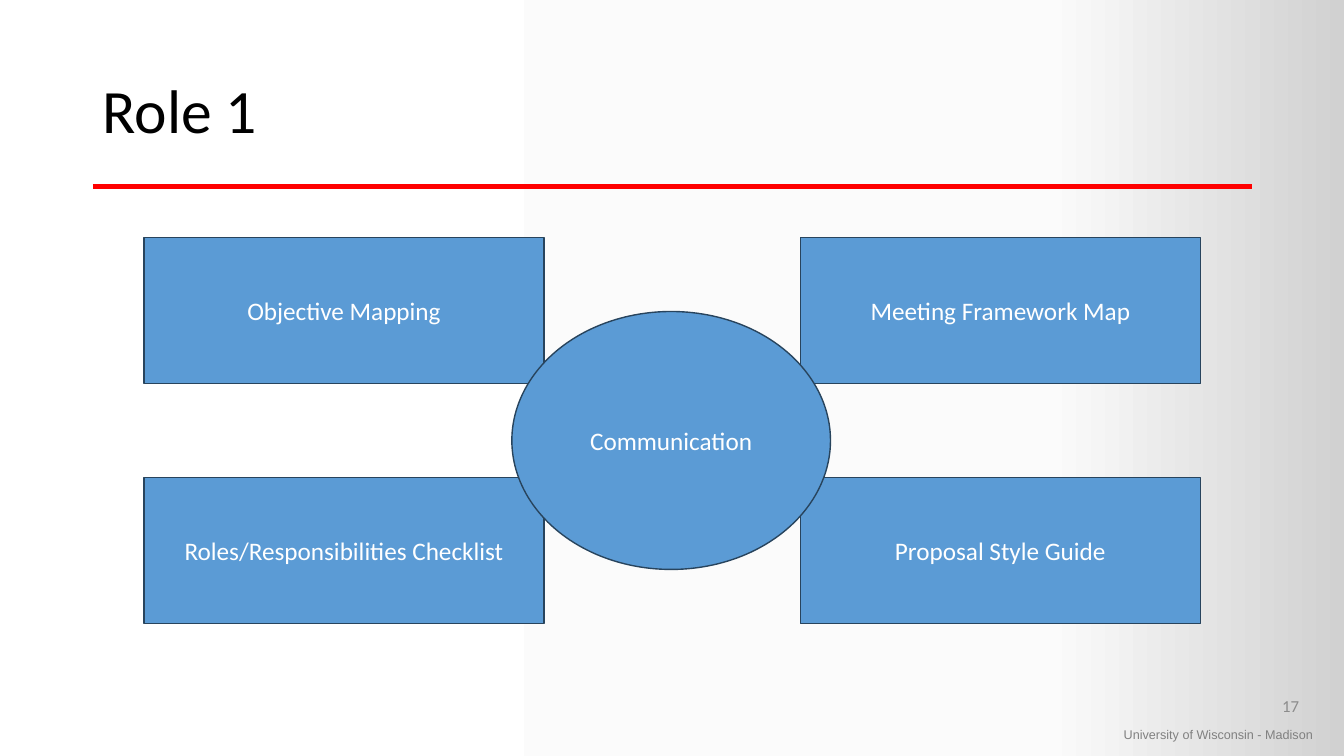
"""Build the Role 1 slide."""
from copy import deepcopy

from lxml import etree
from pptx import Presentation
from pptx.dml.color import RGBColor
from pptx.enum import shapes, text
from pptx.oxml.ns import qn
from pptx.util import Cm, Pt

WHITE = RGBColor(0xFF, 0xFF, 0xFF)
PALE = RGBColor(0xFB, 0xFB, 0xFB)
SILVER = RGBColor(0xD1, 0xD1, 0xD1)
BLACK = RGBColor(0, 0, 0)
RED = RGBColor(0xFF, 0, 0)
BLUE = RGBColor(0x5B, 0x9B, 0xD5)
NAVY = RGBColor(0x28, 0x44, 0x5D)
GRAY = RGBColor(0x80, 0x80, 0x80)
ASH = RGBColor(0x8C, 0x8C, 0x8C)

LEFT, MID, RIGHT = (text.PP_ALIGN.LEFT, text.PP_ALIGN.CENTER,
                    text.PP_ALIGN.RIGHT)
TOP, CORE = text.MSO_ANCHOR.TOP, text.MSO_ANCHOR.MIDDLE
TITLE = {"size": Pt(44), "name": "Calibri"}
LABEL = {"size": Pt(18), "name": "Calibri"}
PAGE = {"size": Pt(12), "name": "Calibri"}
FOOT = {"size": Pt(9), "name": "Arial"}

BOXES = (("Objective Mapping", "Meeting Framework Map"),
         ("Roles/Responsibilities Checklist", "Proposal Style Guide"))


def shade(slide):
    """Give the slide its left-to-right gradient."""
    fill = slide.background.fill
    fill.gradient()
    fill.gradient_angle = 0
    stops = slide.element.find(".//" + qn("a:gsLst"))
    stops.append(deepcopy(stops[-1]))
    marks = ((0, WHITE), (0.78, PALE), (1, SILVER))
    for stop, (place, color) in zip(fill.gradient_stops, marks):
        stop.position = place
        stop.color.rgb = color


def write(shape, words, style, color, align, anchor=CORE):
    """Put styled words into a shape."""
    frame = shape.text_frame
    frame.word_wrap = True
    frame.vertical_anchor = anchor
    para = frame.paragraphs[0]
    para.text = words
    para.alignment = align
    font = para.runs[0].font
    for key, value in style.items():
        setattr(font, key, value)
    font.color.rgb = color
    return para


def note(slide, area, *args):
    """Add a text box."""
    box = slide.shapes.add_textbox(*map(Cm, area))
    return write(box, *args)


def block(slide, kind, area, words):
    """Add a blue labelled shape."""
    shape = slide.shapes.add_shape(kind, *map(Cm, area))
    shape.shadow.inherit = False
    shape.fill.solid()
    shape.fill.fore_color.rgb = BLUE
    shape.line.color.rgb = NAVY
    shape.line.width = Pt(1)
    write(shape, words, LABEL, WHITE, MID)


def rule(slide, *ends):
    """Add the red line below the title."""
    line = slide.shapes.add_connector(shapes.MSO_CONNECTOR.STRAIGHT,
                                      *map(Cm, ends))
    line.line.color.rgb = RED
    line.line.width = Pt(3)
    etree.SubElement(line.element.spPr, qn("a:effectLst"))


def main():
    """Assemble and save the slide."""
    deck = Presentation()
    deck.slide_width, deck.slide_height = Cm(33.87), Cm(19.05)
    slide = deck.slides.add_slide(deck.slide_layouts[6])
    shade(slide)
    note(slide, (28.07, 18.19, 10.39, 0.64),
         "University of Wisconsin - Madison", FOOT, GRAY, LEFT, TOP)
    rule(slide, 2.34, 4.7, 31.55, 4.7)
    title = note(slide, (2.34, 1.02, 29.21, 3.68),
                 "Role 1", TITLE, BLACK, LEFT)
    title.line_spacing = 0.9
    note(slide, (25.37, 17.27, 7.62, 1.02), "17", PAGE, ASH, RIGHT)
    for row, names in enumerate(BOXES):
        for col, name in enumerate(names):
            area = (3.63 + 16.54 * col, 5.99 + 6.05 * row, 10.08, 3.68)
            block(slide, shapes.MSO_SHAPE.RECTANGLE, area, name)
    block(slide, shapes.MSO_SHAPE.OVAL, (12.9, 7.85, 8.03, 6.5),
          "Communication")
    deck.save("out.pptx")


if __name__ == "__main__":
    main()
